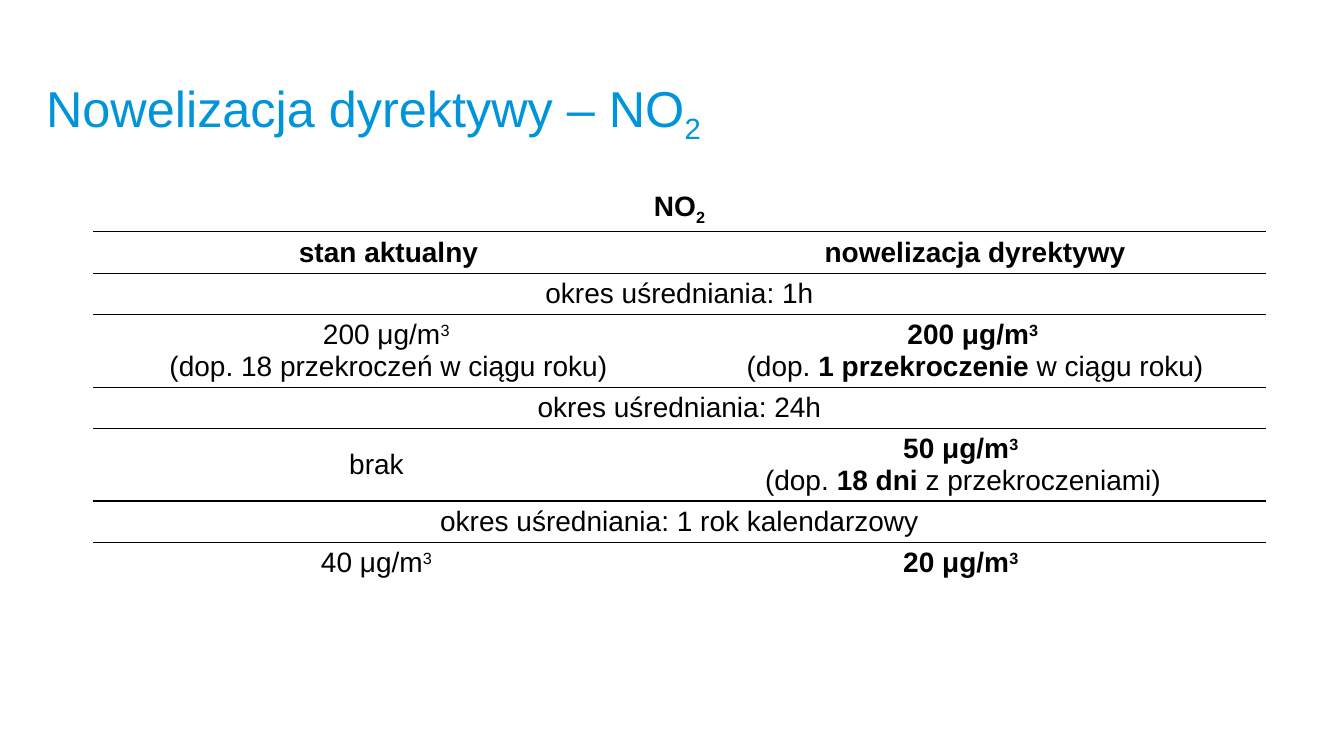
from lxml import etree
from pptx import Presentation
from pptx.dml.color import RGBColor
from pptx.enum.text import MSO_ANCHOR, MSO_AUTO_SIZE, PP_ALIGN
from pptx.oxml.ns import qn
from pptx.util import Pt

MIDDLE, NO_FIT = MSO_ANCHOR.MIDDLE, MSO_AUTO_SIZE.NONE
LEFT, CENTER = PP_ALIGN.LEFT, PP_ALIGN.CENTER
BLUE = RGBColor(0x00, 0x95, 0xDA)
BLACK = RGBColor(0x00, 0x00, 0x00)
FONT = "Arial"
PLAIN_TABLE_STYLE = "{2D5ABB26-0587-4C30-8999-92F81FD0307C}"
PX = 914400 / 100.8

# Content: a span is (text, marks); b = bold, ^ = superscript, _ = subscript
TITLE = [("Nowelizacja dyrektywy – NO", ""), ("2", "_")]

# A row lists its cells as (columns covered, paragraphs)
ROWS = [
    [(3, [[("NO", "b"), ("2", "b_")]])],
    [(2, [[("stan aktualny", "b")]]),
     (1, [[("nowelizacja dyrektywy", "b")]])],
    [(3, [[("okres uśredniania: 1h", "")]])],
    [(2, [[("200 μg/m", ""), ("3 ", "^")],
          [("(dop. 18 przekroczeń w ciągu roku)", "")]]),
     (1, [[("200 μg/m", "b"), ("3 ", "b^")],
          [("(dop. ", ""), ("1 przekroczenie ", "b"), ("w ciągu roku)", "")]])],
    [(3, [[("okres uśredniania: 24h", "")]])],
    [(1, [[("brak", "")]]),
     (2, [[("50 μg/m", "b"), ("3 ", "b^")],
          [("(dop. ", ""), ("18 dni", "b"), (" z przekroczeniami)", "")]])],
    [(3, [[("okres uśredniania: 1 rok kalendarzowy", "")]])],
    [(1, [[("40 μg/m", ""), ("3", "^")]]),
     (2, [[("20 μg/m", "b"), ("3 ", "b^")]])],
]

# Layout in px
SLIDE_SIZE = (1344, 756)
TITLE_BOX = (36, 0, 913, 217)
TABLE_LEFT, TABLE_TOP = 93, 186
COLUMN_WIDTHS = [567, 14, 582]
ROW_HEIGHT = 41


def px(length):
    return round(length * PX)


def write_spans(para, spans, size, color, align):
    para.alignment = align
    for text, marks in spans:
        span = para.add_run()
        span.text = text
        span.font.name = FONT
        span.font.size = Pt(size)
        span.font.color.rgb = color
        span.font.bold = "b" in marks
        if "^" in marks:
            span.font._element.set("baseline", "30000")
        elif "_" in marks:
            span.font._element.set("baseline", "-25000")


def add_border(cell, side):
    line = etree.SubElement(cell._tc.get_or_add_tcPr(), qn(f"a:{side}"), w=str(Pt(1)))
    fill = etree.SubElement(line, qn("a:solidFill"))
    etree.SubElement(fill, qn("a:srgbClr"), val=str(BLACK))


deck = Presentation()
deck.slide_width, deck.slide_height = map(px, SLIDE_SIZE)
page = deck.slides.add_slide(deck.slide_layouts[5])

# Title
title = page.shapes.title
title.left, title.top, title.width, title.height = map(px, TITLE_BOX)
frame = title.text_frame
frame.word_wrap = True
frame.auto_size = NO_FIT
frame.vertical_anchor = MIDDLE
frame.paragraphs[0].line_spacing = 0.9
write_spans(frame.paragraphs[0], TITLE, 36, BLUE, LEFT)

# Table grid
table = page.shapes.add_table(
    len(ROWS), len(COLUMN_WIDTHS), px(TABLE_LEFT), px(TABLE_TOP),
    px(sum(COLUMN_WIDTHS)), px(ROW_HEIGHT * len(ROWS))).table
table.first_row = table.horz_banding = False
table._tbl.tblPr.find(qn("a:tableStyleId")).text = PLAIN_TABLE_STYLE
for column, width in zip(table.columns, COLUMN_WIDTHS):
    column.width = px(width)
for row in table.rows:
    row.height = px(ROW_HEIGHT)

# Rules between rows
last_row = len(ROWS) - 1
for row_index, row in enumerate(table.rows):
    for cell in row.cells:
        if row_index > 0:
            add_border(cell, "lnT")
        if row_index < last_row:
            add_border(cell, "lnB")
        cell.fill.background()

# Cell text
for row_index, cells in enumerate(ROWS):
    column_index = 0
    for covered, paragraphs in cells:
        cell = table.cell(row_index, column_index)
        if covered > 1:
            cell.merge(table.cell(row_index, column_index + covered - 1))
        cell.vertical_anchor = MIDDLE
        for number, spans in enumerate(paragraphs):
            frame = cell.text_frame
            para = frame.add_paragraph() if number else frame.paragraphs[0]
            write_spans(para, spans, 20, BLACK, CENTER)
        column_index += covered

deck.save("out.pptx")
